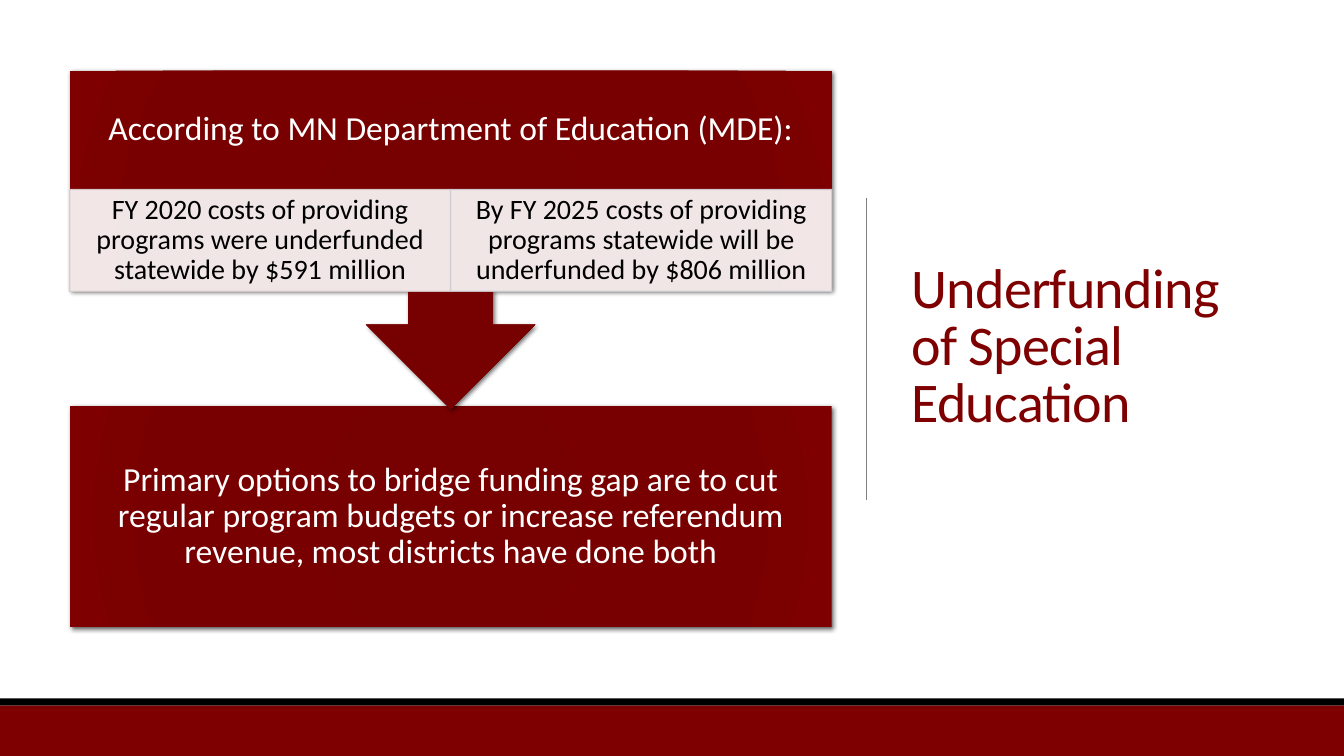
from lxml.etree import SubElement
from pptx import Presentation
from pptx.dml.color import RGBColor
from pptx.enum.shapes import MSO_CONNECTOR as Connector, MSO_SHAPE as Shape
from pptx.enum.text import MSO_ANCHOR as Anchor, MSO_AUTO_SIZE as AutoSize, PP_ALIGN as Align
from pptx.oxml.ns import qn
from pptx.util import Inches, Pt

COLORS = {
    "maroon": "7E0000", "black": "000000", "white": "FFFFFF", "gray": "808080",
    "rose edge": "D8CCCC", "gray edge": "CCCDD1",
}
GRADIENT = [(0, "750000"), (34, "770000"), (70, "780000"), (100, "7E0000")]
FONT = "Calibri"

LEFT, WIDTH = 0.69, 7.56
CELL_TOP, CELL_HEIGHT = 1.88, 1.01


def color(name):
    return RGBColor.from_string(COLORS[name])


def add_block(page, kind, left, top, width, height, fill):
    block = page.shapes.add_shape(
        kind, Inches(left), Inches(top), Inches(width), Inches(height))
    block.shadow.inherit = False
    block.fill.solid()
    block.fill.fore_color.rgb = color(fill)
    block.line.fill.background()
    return block


def write(block, text, size, ink, insets):
    frame = block.text_frame
    frame.word_wrap = True
    frame.vertical_anchor = Anchor.MIDDLE
    (frame.margin_left, frame.margin_top,
     frame.margin_right, frame.margin_bottom) = map(Inches, insets)
    para = frame.paragraphs[0]
    para.text = text
    para.alignment = Align.CENTER
    para.line_spacing = 0.9
    para.font.name = FONT
    para.font.size = Pt(size)
    para.font.color.rgb = color(ink)


def add_callout(page, kind, top, height, text, bottom_inset=0.19):
    """Maroon block with a radial gradient and a soft shadow."""
    block = add_block(page, kind, LEFT, top, WIDTH, height, "maroon")
    properties = block.element.spPr

    solid = properties.find(qn("a:solidFill"))
    gradient = SubElement(properties, qn("a:gradFill"), rotWithShape="1")
    properties.replace(solid, gradient)
    stops = SubElement(gradient, qn("a:gsLst"))
    for position, shade in GRADIENT:
        stop = SubElement(stops, qn("a:gs"), pos=str(position * 1000))
        SubElement(stop, qn("a:srgbClr"), val=shade)
    circle = SubElement(gradient, qn("a:path"), path="circle")
    SubElement(circle, qn("a:fillToRect"), {side: "100000" for side in "ltrb"})

    shadow = SubElement(
        properties.find(qn("a:effectLst")), qn("a:outerShdw"),
        blurRad=str(Pt(3)), dist=str(Pt(2)), dir=str(45 * 60000), rotWithShape="0")
    tint = SubElement(shadow, qn("a:srgbClr"), val=COLORS["black"])
    SubElement(tint, qn("a:alpha"), val="60000")
    write(block, text, 24, "white", (0.19, 0.19, 0.19, bottom_inset))


def add_cell(page, column, text, edge, inset):
    """Pale cell, slightly see-through, in the lower part of the callout."""
    width = WIDTH / 2
    cell = add_block(page, Shape.RECTANGLE, LEFT + column * width, CELL_TOP,
                     width, CELL_HEIGHT, "white")
    cell.line.color.rgb = color(edge)
    cell.line.width = Pt(1)
    for tint in cell.element.spPr.iter(qn("a:srgbClr")):
        SubElement(tint, qn("a:alpha"), val="90000")
    write(cell, text, 20, "black", (inset, 0.03, inset, 0.03))


def add_title(page, text):
    title = page.shapes.title
    title.left, title.top = Inches(8.94), Inches(0.69)
    title.width, title.height = Inches(3.69), Inches(5.53)
    frame = title.text_frame
    frame.auto_size = AutoSize.NONE
    frame.word_wrap = True
    frame.vertical_anchor = Anchor.MIDDLE
    para = frame.paragraphs[0]
    para.alignment = Align.LEFT
    para.line_spacing = 0.85
    span = para.add_run()
    span.text = text
    span.font.name = FONT
    span.font.size = Pt(40)
    span.font.color.rgb = color("maroon")
    span.font._element.set("spc", "-50")


def add_divider(page, x, top, bottom):
    divider = page.shapes.add_connector(
        Connector.STRAIGHT, Inches(x), Inches(top), Inches(x), Inches(bottom))
    divider.line.color.rgb = color("gray")
    divider.line.width = Pt(0.5)
    SubElement(divider.element.spPr, qn("a:effectLst"))


def main():
    deck = Presentation()
    deck.slide_width, deck.slide_height = Inches(13.33), Inches(7.5)
    page = deck.slides.add_slide(deck.slide_layouts[5])

    # Title and divider
    add_title(page, "Underfunding of Special Education")
    add_divider(page, 8.59, 1.96, 4.96)

    # Footer bands
    add_block(page, Shape.RECTANGLE, 0, 6.93, 13.33, 0.07, "black")
    add_block(page, Shape.RECTANGLE, 0, 7, 13.33, 0.5, "maroon")

    # Consequence, then the findings that point down to it
    add_callout(page, Shape.RECTANGLE, 4.03, 2.19,
                "Primary options to bridge funding gap are to cut regular program "
                "budgets or increase referendum revenue, most districts have done both")
    add_callout(page, Shape.DOWN_ARROW_CALLOUT, 0.7, 3.36,
                "According to MN Department of Education (MDE):",
                bottom_inset=CELL_HEIGHT + 0.19)
    add_cell(page, 0, "FY 2020 costs of providing programs were underfunded "
             "statewide by $591 million", "rose edge", 0.16)
    add_cell(page, 1, "By FY 2025 costs of providing programs statewide will be "
             "underfunded by $806 million", "gray edge", 0.1)

    deck.save("out.pptx")


if __name__ == "__main__":
    main()
